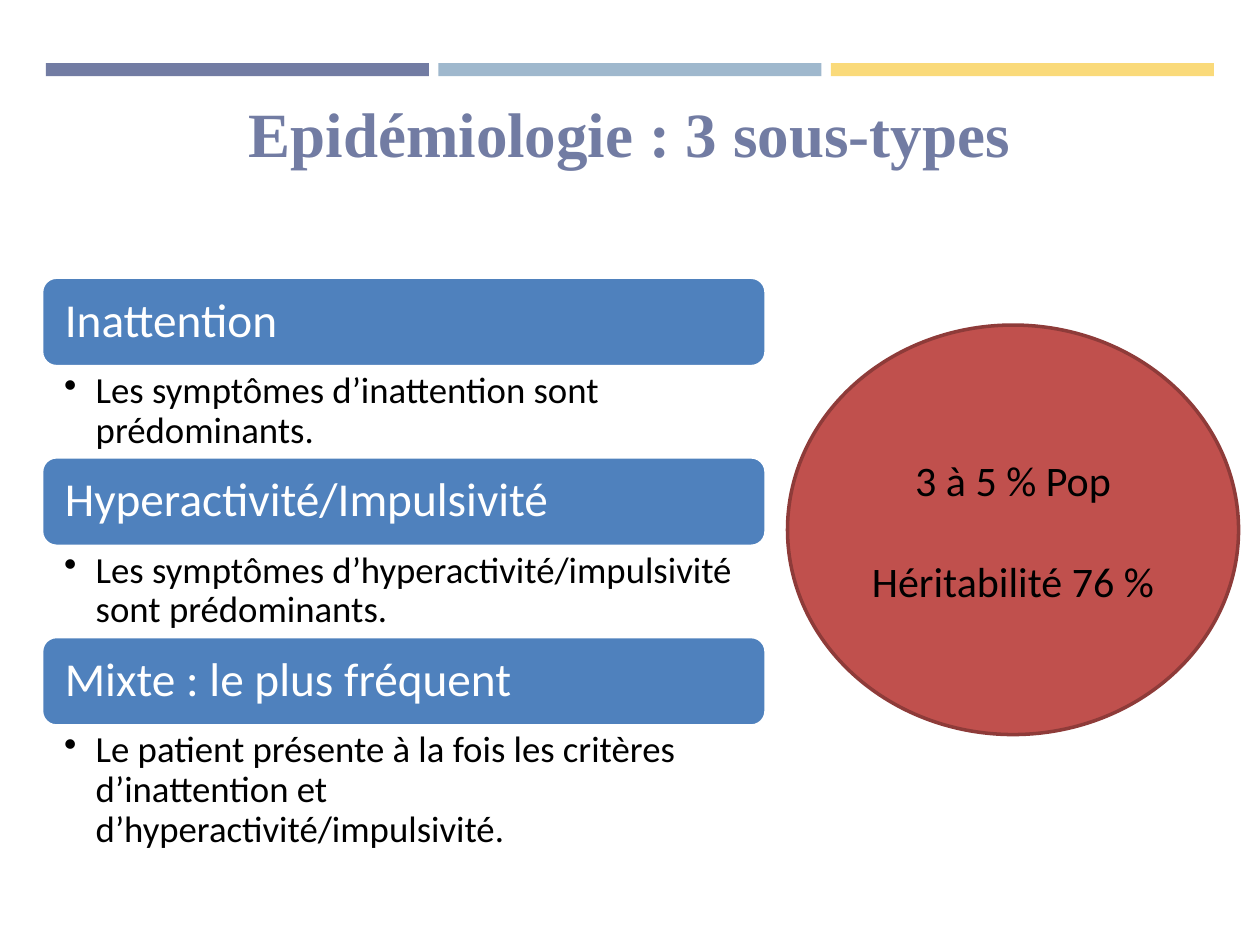
from lxml import etree
from pptx import Presentation, util as u
from pptx.dml.color import RGBColor
from pptx.enum import shapes, text
from pptx.oxml.ns import qn

COLORS = {"indigo": "727CA3", "sky": "9FB8CD", "yellow": "FADA7A", "blue": "4F81BD",
          "red": "C0504D", "dark_red": "8E3B39", "white": "FFFFFF", "black": "000000"}
COLS, ROWS = 100, 75


class Deck:
    font = "Calibri"

    def __init__(self):
        self.prs = Presentation()
        self.prs.slide_width, self.prs.slide_height = u.Inches(10), u.Inches(7.5)
        self.slide = self.prs.slides.add_slide(self.prs.slide_layouts[5])

    def place(self, col, row, cols, rows):
        cw, rh = self.prs.slide_width / COLS, self.prs.slide_height / ROWS
        return [round(n) for n in (col * cw, row * rh, cols * cw, rows * rh)]

    def frame(self, sp, insets, anchor):
        tf = sp.text_frame
        tf.word_wrap = True
        tf.vertical_anchor = anchor
        tf.margin_left, tf.margin_top, tf.margin_right, tf.margin_bottom = map(u.Inches, insets)
        return tf

    def run(self, p, words, size, color, font=font, bold=False):
        r = p.add_run()
        r.text = words
        r.font.size, r.font.name, r.font.bold = u.Pt(size), font, bold
        r.font.color.rgb = RGBColor.from_string(COLORS[color])

    def shape(self, kind, area, fill, line=None):
        sp = self.slide.shapes.add_shape(kind, *self.place(*area))
        sp.shadow.inherit = False
        sp.fill.solid()
        sp.fill.fore_color.rgb = RGBColor.from_string(COLORS[fill])
        if line:
            sp.line.color.rgb = RGBColor.from_string(COLORS[line])
            sp.line.width = u.Pt(2)
        else:
            sp.line.fill.background()
        return sp

    def title(self, words, area):
        sp = self.slide.shapes.title
        sp.left, sp.top, sp.width, sp.height = self.place(*area)
        p = self.frame(sp, (0, 0, 0, 0), text.MSO_ANCHOR.TOP).paragraphs[0]
        p.alignment = text.PP_ALIGN.CENTER
        self.run(p, words, 36, "indigo", "Times New Roman", True)

    def bar(self, area, color):
        self.shape(shapes.MSO_SHAPE.RECTANGLE, area, color)

    def heading(self, words, area):
        sp = self.shape(shapes.MSO_SHAPE.ROUNDED_RECTANGLE, area, "blue", "white")
        p = self.frame(sp, (0.15, 0.11, 0.15, 0.11), text.MSO_ANCHOR.MIDDLE).paragraphs[0]
        p.alignment = text.PP_ALIGN.LEFT
        p.line_spacing = 0.9
        self.run(p, words, 27, "white")

    def bullet(self, words, area):
        sp = self.slide.shapes.add_textbox(*self.place(*area))
        p = self.frame(sp, (0.18, 0.04, 0.21, 0.04), text.MSO_ANCHOR.TOP).paragraphs[0]
        pPr = p._p.get_or_add_pPr()
        pPr.set("marL", str(u.Inches(0.25)))
        pPr.set("indent", str(-u.Inches(0.25)))
        etree.SubElement(pPr, qn("a:buChar")).set("char", "•")
        p.line_spacing = 0.9
        self.run(p, words, 21, "black")

    def circle(self, lines, area):
        sp = self.shape(shapes.MSO_SHAPE.FLOWCHART_CONNECTOR, area, "red", "dark_red")
        tf = self.frame(sp, (0.1, 0.05, 0.1, 0.05), text.MSO_ANCHOR.MIDDLE)
        for i, words in enumerate(lines):
            p = tf.add_paragraph() if i else tf.paragraphs[0]
            p.alignment = text.PP_ALIGN.CENTER
            if i:
                p.space_before = u.Pt(29)
            self.run(p, words, 24, "black")


def main():
    deck = Deck()
    for i, color in enumerate(("indigo", "sky", "yellow")):
        deck.bar((3.65 + 31.15 * i, 5, 30.4, 1.05), color)
    deck.title("Epidémiologie : 3 sous-types", (14.2, 7.5, 71.5, 6.1))

    subtypes = [
        ("Inattention", "Les symptômes d’inattention sont prédominants.", 7.2),
        ("Hyperactivité/Impulsivité",
         "Les symptômes d’hyperactivité/impulsivité sont prédominants.", 7.2),
        ("Mixte : le plus fréquent",
         "Le patient présente à la fois les critères d’inattention et "
         "d’hyperactivité/impulsivité.", 10.4),
    ]
    left, width, head_rows = 3.3, 57.5, 7.1
    for i, (name, detail, rows) in enumerate(subtypes):
        top = 22 + 14.26 * i
        deck.heading(name, (left, top, width, head_rows))
        deck.bullet(detail, (left, top + head_rows, width, rows))

    deck.circle(("3 à 5 % Pop", "Héritabilité 76 %"), (62.5, 25.8, 35.8, 32.5))
    deck.prs.save("out.pptx")


if __name__ == "__main__":
    main()
